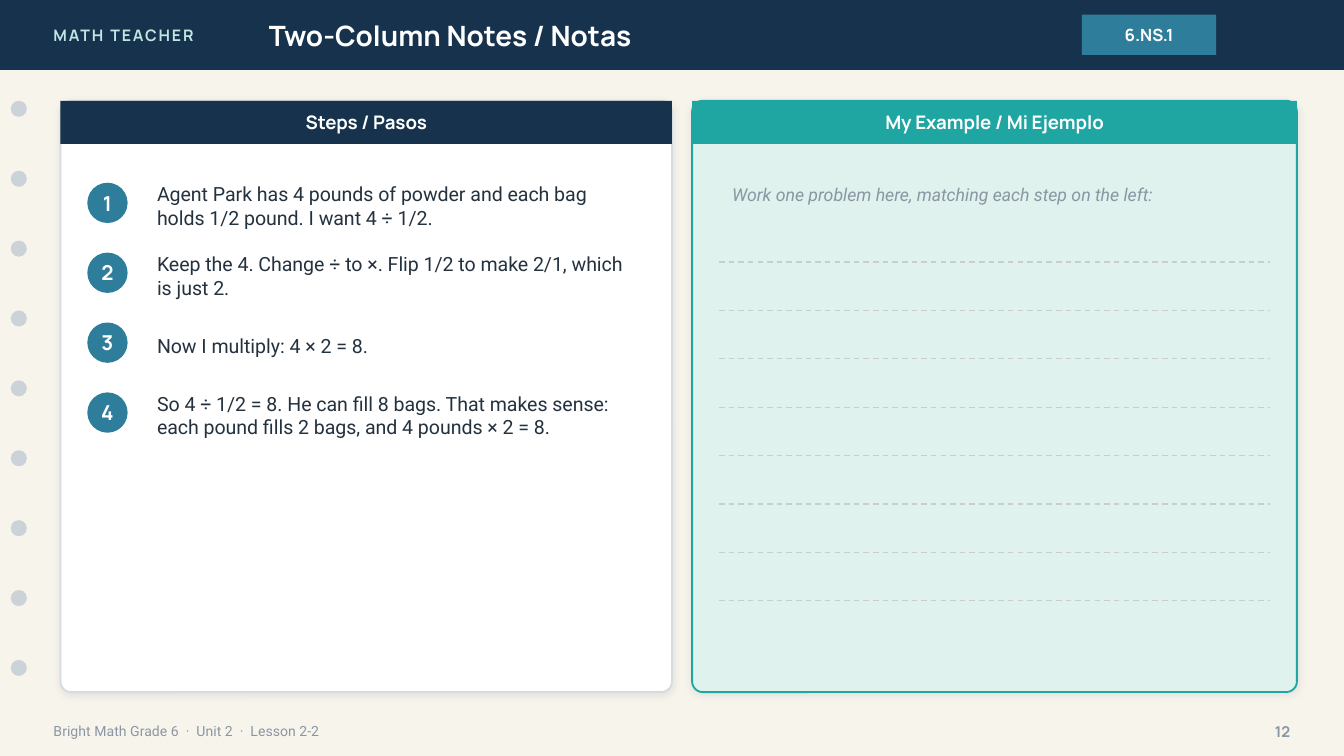
from dataclasses import dataclass
from lxml.etree import SubElement
from pptx import Presentation
from pptx.dml.color import RGBColor
from pptx.enum.dml import MSO_LINE
from pptx.enum.shapes import MSO_CONNECTOR, MSO_SHAPE as Kind
from pptx.enum.text import MSO_ANCHOR, MSO_AUTO_SIZE, PP_ALIGN as Align
from pptx.oxml.ns import qn
from pptx.util import Inches, Pt

HUES = {
    "paper": "F7F4EC", "navy": "17324D", "blue": "2E7D9A", "teal": "1FA6A2",
    "mint": "DFF2EE", "pale": "BFE6E2", "white": "FFFFFF", "ink": "24323F",
    "grey": "8A96A3", "hole": "CBD3D9", "edge": "D6DBDF", "rule": "C7CDD2",
    "shade": "1C2E42",
}
HEAD, BODY = "Manrope", "Roboto"
COLS, ROWS = 100, 56.25  # square grid cells
WIDE, HIGH = Inches(10), Inches(5.625)


@dataclass(frozen=True)
class Box:
    col: float
    row: float
    cols: float
    rows: float

    def place(self) -> tuple:
        return (x(self.col), y(self.row), x(self.cols), y(self.rows))


@dataclass(frozen=True)
class Style:
    size: float
    hue: str
    font: str = HEAD
    bold: bool = True
    slant: bool = False
    align: Align = Align.LEFT
    track: int = 0


@dataclass(frozen=True)
class Card:
    box: Box
    fill: str
    edge: str
    band: str
    head: str


def x(cols: float) -> int:
    return round(WIDE * cols / COLS)


def y(rows: float) -> int:
    return round(HIGH * rows / ROWS)


def tint(name: str) -> RGBColor:
    return RGBColor.from_string(HUES[name])


def write(shape, text: str, style: Style, pad: float = 1) -> None:
    frame = shape.text_frame
    frame.auto_size = MSO_AUTO_SIZE.NONE
    frame.word_wrap = True
    frame.vertical_anchor = MSO_ANCHOR.MIDDLE
    frame.margin_left = frame.margin_right = x(pad)
    para = frame.paragraphs[0]
    para.alignment = style.align
    run = para.add_run()
    run.text = text
    font = run.font
    font.name, font.size = style.font, Pt(style.size)
    font.bold, font.italic = style.bold, style.slant
    font.color.rgb = tint(style.hue)
    if style.track:
        run._r.get_or_add_rPr().set("spc", str(style.track))


def label(box: Box, text: str, style: Style) -> None:
    write(slide.shapes.add_textbox(*box.place()), text, style)


def solid(kind: Kind, box: Box, fill: str, edge: str = ""):
    shape = slide.shapes.add_shape(kind, *box.place())
    shape.fill.solid()
    shape.fill.fore_color.rgb = tint(fill)
    if edge:
        shape.line.color.rgb = tint(edge)
        shape.line.width = Pt(1)
    else:
        shape.line.fill.background()
    shape.shadow.inherit = False
    return shape


def shade(shape) -> None:
    glow = SubElement(
        shape._element.spPr.find(qn("a:effectLst")), qn("a:outerShdw"),
        blurRad=str(Pt(4)), dist=str(Pt(1)), dir="5400000",
        algn="bl", rotWithShape="0")
    hue = SubElement(glow, qn("a:srgbClr"), val=HUES["shade"])
    SubElement(hue, qn("a:alpha"), val="10000")


def panel(card: Card) -> None:
    box = card.box
    back = solid(Kind.ROUNDED_RECTANGLE, box, card.fill, card.edge)
    back.adjustments[0] = 0.018
    shade(back)
    band = solid(Kind.RECTANGLE, Box(box.col, box.row, box.cols, 3.2), card.band)
    write(band, card.head, Style(10, "white", align=Align.CENTER))


def rule(left: float, right: float, row: float) -> None:
    line = slide.shapes.add_connector(
        MSO_CONNECTOR.STRAIGHT, x(left), y(row), x(right), y(row))
    line.line.color.rgb = tint("rule")
    line.line.width = Pt(0.75)
    line.line.dash_style = MSO_LINE.DASH
    SubElement(line._element.spPr, qn("a:effectLst"))


deck = Presentation()
deck.slide_width, deck.slide_height = WIDE, HIGH
slide = deck.slides.add_slide(deck.slide_layouts[5])
slide.background.fill.solid()
slide.background.fill.fore_color.rgb = tint("paper")

# Top bar, with the title raised above it
solid(Kind.RECTANGLE, Box(0, 0, COLS, 5.2), "navy")
label(Box(3, 0, 24, 5.2), "MATH TEACHER", Style(8.5, "pale", track=100))
title = slide.shapes.title
title.left, title.top, title.width, title.height = Box(19, 0, 56, 5.2).place()
write(title, "Two-Column Notes / Notas", Style(15, "white"))
slide.shapes._spTree.append(title._element)
code = solid(Kind.RECTANGLE, Box(80.5, 1.1, 10, 3), "blue")
write(code, "6.NS.1", Style(9, "white", align=Align.CENTER))

# Binder holes
STEP = 5.2
for i in range(9):
    solid(Kind.OVAL, Box(0.8, 7.5 + i * STEP, 1.2, 1.2), "hole")

# Footer
label(Box(3, 53, 70, 2.8), "Bright Math Grade 6  ·  Unit 2  ·  Lesson 2-2",
      Style(7.5, "grey", BODY, bold=False))
label(Box(92, 53, 5, 2.8), "12", Style(8, "grey", align=Align.RIGHT))

# Steps card
panel(Card(Box(4.5, 7.5, 45.5, 44), "white", "edge", "navy", "Steps / Pasos"))
STEPS = [
    "Agent Park has 4 pounds of powder and each bag holds 1/2 pound. I want 4 ÷ 1/2.",
    "Keep the 4. Change ÷ to ×. Flip 1/2 to make 2/1, which is just 2.",
    "Now I multiply: 4 × 2 = 8.",
    "So 4 ÷ 1/2 = 8. He can fill 8 bags. That makes sense: "
    "each pound fills 2 bags, and 4 pounds × 2 = 8.",
]
for i, text in enumerate(STEPS):
    row = 13 + i * STEP
    disc = solid(Kind.OVAL, Box(6.5, row + 0.6, 3, 3), "blue")
    write(disc, str(i + 1), Style(11, "white", align=Align.CENTER), pad=0)
    label(Box(10.7, row, 37.8, 4.6), text, Style(10.5, "ink", BODY, bold=False))

# Example card with writing lines
panel(Card(Box(51.5, 7.5, 45, 44), "mint", "teal", "teal", "My Example / Mi Ejemplo"))
label(Box(53.5, 12.5, 41, 4), "Work one problem here, matching each step on the left:",
      Style(9.5, "grey", BODY, bold=False, slant=True))
for i in range(8):
    rule(53.5, 94.5, 19.5 + i * 3.6)

deck.save("out.pptx")
